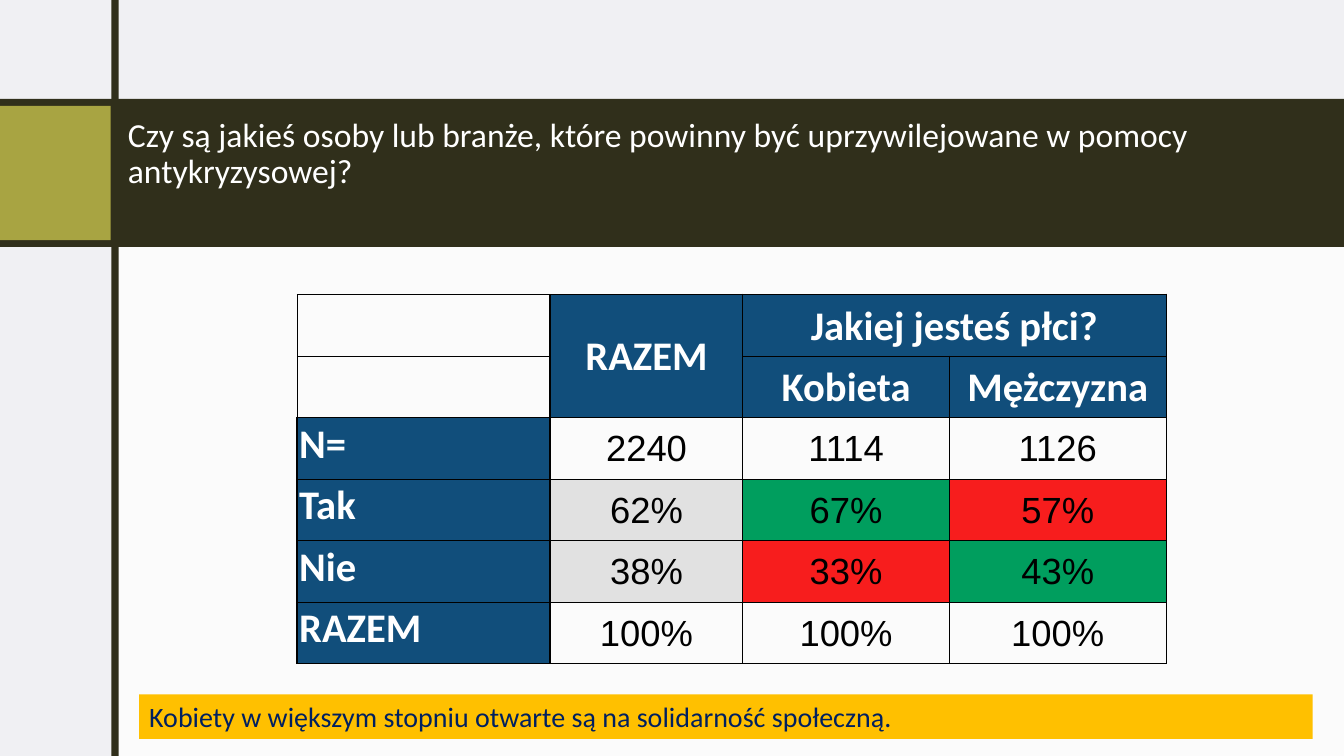
from dataclasses import dataclass

import lxml.etree
import pptx
import pptx.dml.color
import pptx.enum.shapes
import pptx.enum.text
import pptx.oxml.ns
import pptx.util

Cm = pptx.util.Cm
Pt = pptx.util.Pt
PP_ALIGN = pptx.enum.text.PP_ALIGN
MSO_ANCHOR = pptx.enum.text.MSO_ANCHOR
MSO_AUTO_SIZE = pptx.enum.text.MSO_AUTO_SIZE
qn = pptx.oxml.ns.qn

OLIVE, NAVY, WHITE, BLACK = "302F1B", "114E7B", "FFFFFF", "000000"
GREY, GREEN, RED = "E1E1E1", "009E5E", "F71D1D"
WIDTH, HEIGHT = 33.87, 19.05
COL_WIDTHS = (6.38, 4.85, 5.21, 5.46)
ROW_HEIGHT = 1.55
HEADER_ROWS = 2


@dataclass
class Block:
    x: float
    y: float
    w: float
    h: float
    fill: str
    opacity: int = 100


@dataclass
class Entry:
    text: str = ""
    fill: str | None = None


def label(text: str) -> Entry:
    return Entry(text, NAVY)


BACKDROP = (
    Block(0, 0, WIDTH, HEIGHT, "F0F0F3"),
    Block(2.9, 5.92, 30.97, 13.13, WHITE, 75),
    Block(0, 2.49, WIDTH, 3.73, OLIVE),
)
ACCENTS = (
    Block(0, 2.67, 2.79, 3.38, "A8A442"),
    Block(2.81, 0, 0.18, HEIGHT, OLIVE),
)
NOTE = Block(3.51, 17.5, 29.57, 1.12, "FFC000")

ROWS = (
    (Entry(), label("RAZEM"), label("Jakiej jesteś płci?"), label("")),
    (Entry(), label(""), label("Kobieta"), label("Mężczyzna")),
    (label("N="), Entry("2240"), Entry("1114"), Entry("1126")),
    (label("Tak"), Entry("62%", GREY), Entry("67%", GREEN), Entry("57%", RED)),
    (label("Nie"), Entry("38%", GREY), Entry("33%", RED), Entry("43%", GREEN)),
    (label("RAZEM"), Entry("100%"), Entry("100%"), Entry("100%")),
)


def rgb(color: str) -> pptx.dml.color.RGBColor:
    return pptx.dml.color.RGBColor.from_string(color)


def set_font(p, name: str, size: float, color: str, bold: bool = False) -> None:
    p.font.name = name
    p.font.size = Pt(size)
    p.font.bold = bold
    p.font.color.rgb = rgb(color)


def add_block(s, block: Block):
    sp = s.shapes.add_shape(
        pptx.enum.shapes.MSO_SHAPE.RECTANGLE,
        Cm(block.x), Cm(block.y), Cm(block.w), Cm(block.h))
    sp.shadow.inherit = False
    sp.line.fill.background()
    sp.fill.solid()
    sp.fill.fore_color.rgb = rgb(block.fill)
    if block.opacity < 100:
        color = sp.element.spPr.find(qn("a:solidFill"))[0]
        lxml.etree.SubElement(color, qn("a:alpha"), val=str(block.opacity * 1000))
    return sp


def vertical_edge(row: int, col: int) -> float:
    return 1.5 if col == 1 or (col == 0 and row >= HEADER_ROWS) else 0.5


def horizontal_edge(row: int, col: int) -> float:
    return 1.5 if row in (HEADER_ROWS, len(ROWS)) or (row == 0 and col > 0) else 0.5


def set_borders(cell, row: int, col: int) -> None:
    edges = {
        "a:lnL": vertical_edge(row, col),
        "a:lnR": vertical_edge(row, col + 1),
        "a:lnT": horizontal_edge(row, col),
        "a:lnB": horizontal_edge(row + 1, col),
    }
    tcPr = cell._tc.get_or_add_tcPr()
    for tag, weight in edges.items():
        ln = lxml.etree.SubElement(tcPr, qn(tag), w=str(Pt(weight)))
        fill = lxml.etree.SubElement(ln, qn("a:solidFill"))
        lxml.etree.SubElement(fill, qn("a:srgbClr"), val=BLACK)


def fill_cell(cell, entry: Entry, row: int, col: int) -> None:
    set_borders(cell, row, col)
    if entry.fill:
        cell.fill.solid()
        cell.fill.fore_color.rgb = rgb(entry.fill)
    else:
        cell.fill.background()
    cell.margin_left = cell.margin_right = cell.margin_top = Cm(0.05)
    cell.margin_bottom = 0
    cell.vertical_anchor = MSO_ANCHOR.MIDDLE if col else MSO_ANCHOR.TOP
    if not entry.text:
        return
    cell.text = entry.text
    p = cell.text_frame.paragraphs[0]
    p.alignment = PP_ALIGN.CENTER if col else PP_ALIGN.LEFT
    if entry.fill == NAVY:
        set_font(p, "Calibri", 29, WHITE, bold=True)
    else:
        set_font(p, "Arial", 26, BLACK)


def add_results(s) -> None:
    frame = s.shapes.add_table(
        len(ROWS), len(COL_WIDTHS), Cm(7.49), Cm(7.42),
        Cm(sum(COL_WIDTHS)), Cm(ROW_HEIGHT * len(ROWS)))
    table = frame.table
    table.first_row = table.horz_banding = False
    for column, width in zip(table.columns, COL_WIDTHS):
        column.width = Cm(width)
    table.cell(0, 1).merge(table.cell(1, 1))
    table.cell(0, 2).merge(table.cell(0, 3))
    for i, entries in enumerate(ROWS):
        table.rows[i].height = Cm(ROW_HEIGHT)
        for j, entry in enumerate(entries):
            fill_cell(table.cell(i, j), entry, i, j)


def set_title(s, text: str) -> None:
    title = s.shapes.title
    title.element.getparent().append(title.element)
    title.left, title.top = Cm(2.97), Cm(2.46)
    title.width, title.height = Cm(27.81), Cm(2.87)
    tf = title.text_frame
    tf.text = text
    tf.word_wrap = True
    tf.auto_size = MSO_AUTO_SIZE.NONE
    tf.vertical_anchor = MSO_ANCHOR.MIDDLE
    p = tf.paragraphs[0]
    p.alignment = PP_ALIGN.LEFT
    p.line_spacing = 0.9
    set_font(p, "Calibri", 24, WHITE)


def add_note(s, text: str) -> None:
    tf = add_block(s, NOTE).text_frame
    tf.text = text
    tf.word_wrap = True
    tf.auto_size = MSO_AUTO_SIZE.SHAPE_TO_FIT_TEXT
    tf.vertical_anchor = MSO_ANCHOR.TOP
    p = tf.paragraphs[0]
    p.alignment = PP_ALIGN.LEFT
    set_font(p, "Calibri", 20, "002060")


def main() -> None:
    prs = pptx.Presentation()
    prs.slide_width, prs.slide_height = Cm(WIDTH), Cm(HEIGHT)
    s = prs.slides.add_slide(prs.slide_layouts.get_by_name("Title Only"))
    for block in BACKDROP:
        add_block(s, block)
    set_title(s, "Czy są jakieś osoby lub branże, które powinny być "
                 "uprzywilejowane w pomocy antykryzysowej?")
    add_results(s)
    for block in ACCENTS:
        add_block(s, block)
    add_note(s, "Kobiety w większym stopniu otwarte są na solidarność społeczną.")
    prs.save("out.pptx")


if __name__ == "__main__":
    main()
